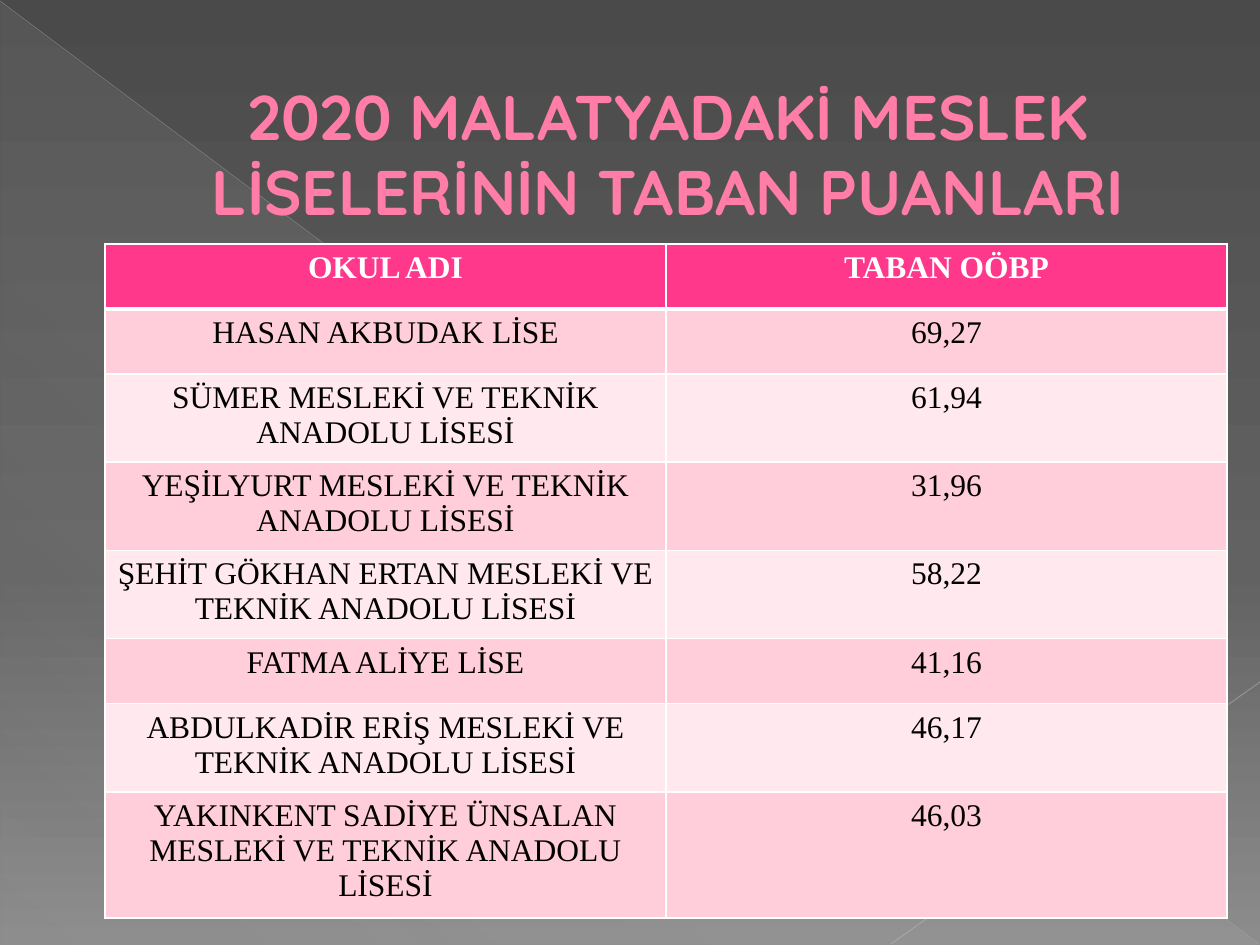
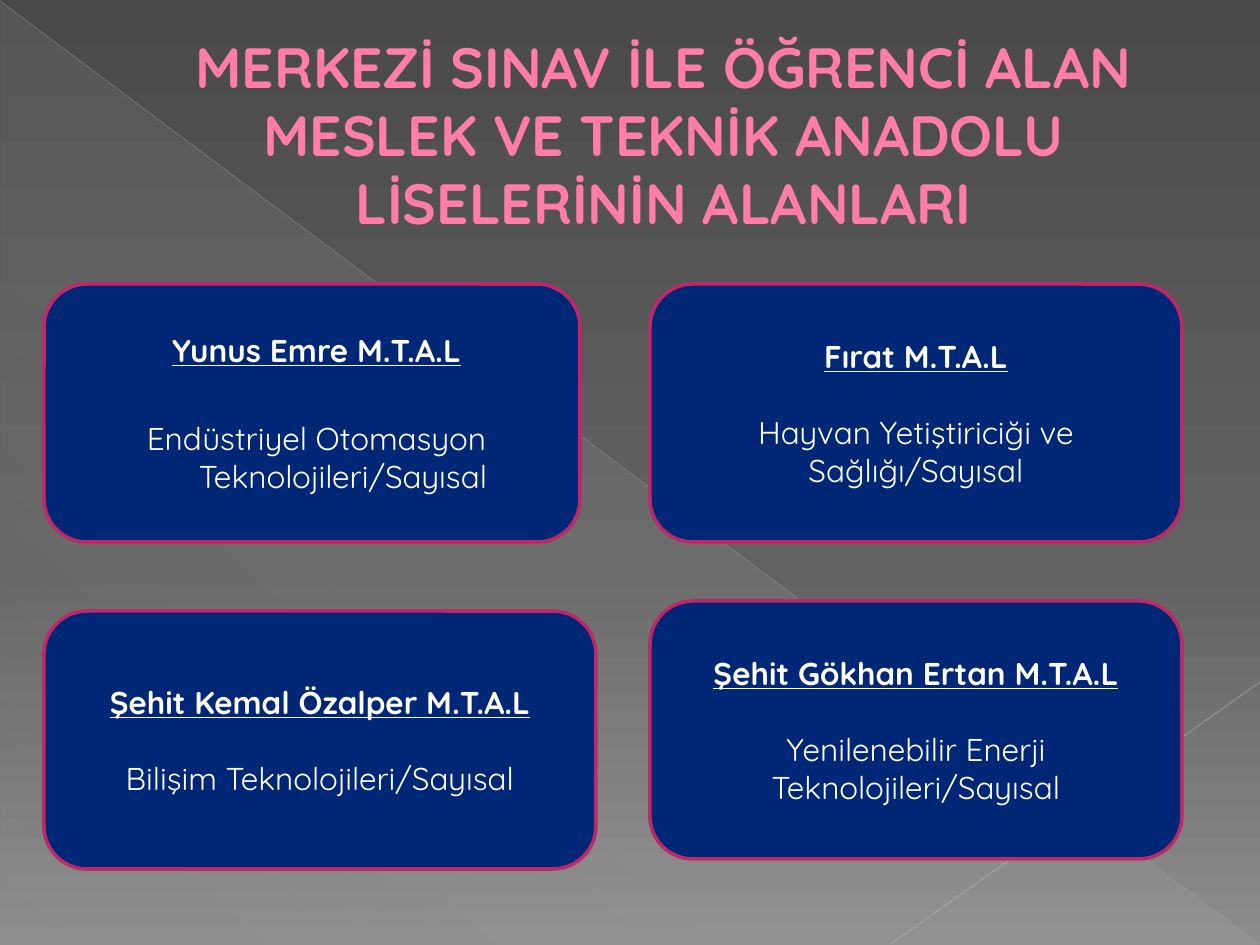
from lxml import etree
from pptx import Presentation
from pptx.dml.color import RGBColor
from pptx.enum.shapes import MSO_CONNECTOR, MSO_SHAPE
from pptx.enum.text import MSO_ANCHOR, PP_ALIGN
from pptx.oxml.ns import qn
from pptx.util import Pt

STRAIGHT = MSO_CONNECTOR.STRAIGHT
TRIANGLE, CARD = MSO_SHAPE.RIGHT_TRIANGLE, MSO_SHAPE.ROUNDED_RECTANGLE
MIDDLE, CENTER = MSO_ANCHOR.MIDDLE, PP_ALIGN.CENTER

WHITE = RGBColor(0xFF, 0xFF, 0xFF)
BLACK = RGBColor(0x00, 0x00, 0x00)
TITLE_PINK = RGBColor(0xFF, 0x7D, 0xA7)
HEADER_PINK = RGBColor(0xFF, 0x38, 0x8C)
ROW_PINKS = (RGBColor(0xFF, 0xCE, 0xDA), RGBColor(0xFF, 0xE8, 0xEE))
CARD_BLUE = RGBColor(0x00, 0x27, 0x76)
CARD_EDGE = RGBColor(0xBD, 0x29, 0x68)
DARK_GRAY = RGBColor(0x4A, 0x4A, 0x4A)
MID_GRAY = RGBColor(0x62, 0x62, 0x62)
SOFT_GRAY = RGBColor(0x8C, 0x8C, 0x8C)
HAZE_GRAY = RGBColor(0xD2, 0xD2, 0xD2)
LONG_RAY = RGBColor(0xBF, 0xBF, 0xBF)
SHORT_RAY = RGBColor(0xC6, 0xC6, 0xC6)

BACKGROUND_STOPS = [(0, DARK_GRAY, 100), (60, MID_GRAY, 100), (100, SOFT_GRAY, 100)]
HAZE_STOPS = [(0, HAZE_GRAY, 10), (70, HAZE_GRAY, 8), (100, HAZE_GRAY, 1)]
HAZE_BOX = (1, 2, 1258, 943)
RAYS = [
    ((0, 1, 1259, 944), LONG_RAY, 0.39, 35),
    ((1260, 682, 891, 944), SHORT_RAY, 0.47, 45),
]

SCORES_TITLE = ("2020 MALATYADAKİ MESLEK LİSELERİNİN TABAN PUANLARI", (44, 76, 1181, 154), 36)
SCORES_HEADER = ("OKUL ADI", "TABAN OÖBP")
SCORES = [
    ("HASAN AKBUDAK LİSE", "69,27"),
    ("SÜMER MESLEKİ VE TEKNİK ANADOLU LİSESİ", "61,94"),
    ("YEŞİLYURT MESLEKİ VE TEKNİK ANADOLU LİSESİ", "31,96"),
    ("ŞEHİT GÖKHAN ERTAN MESLEKİ VE TEKNİK ANADOLU LİSESİ", "58,22"),
    ("FATMA ALİYE LİSE", "41,16"),
    ("ABDULKADİR ERİŞ MESLEKİ VE TEKNİK ANADOLU LİSESİ", "46,17"),
    ("YAKINKENT SADİYE ÜNSALAN MESLEKİ VE TEKNİK ANADOLU LİSESİ", "46,03"),
]
SCORES_LEFT, SCORES_TOP, SCORES_COLUMN = 105, 244, 561
ROW_LINES = (1, 1, 2, 2, 2, 1, 2, 3)
ROW_HEIGHTS = {1: 65, 2: 85, 3: 121}

FIELDS_TITLE = (
    "MERKEZİ SINAV İLE ÖĞRENCİ ALAN MESLEK VE TEKNİK ANADOLU LİSELERİNİN ALANLARI",
    (63, 37, 1134, 193), 32.4)
HANGING = {"marL": 62, "indent": -53}
FIELDS = [
    ("Yunus Emre M.T.A.L", "Endüstriyel Otomasyon Teknolojileri/Sayısal",
     (44, 284, 536, 258), 29, HANGING),
    ("Fırat M.T.A.L", "Hayvan Yetiştiriciği ve Sağlığı/Sayısal",
     (650, 284, 532, 258), 22, {}),
    ("Şehit Kemal Özalper M.T.A.L", "Bilişim Teknolojileri/Sayısal",
     (44, 611, 552, 258), 22, {}),
    ("Şehit Gökhan Ertan M.T.A.L", "Yenilenebilir Enerji Teknolojileri/Sayısal",
     (650, 601, 532, 258), 22, {}),
]

FONT = {"name": "Quicksand", "size": Pt(18), "bold": False}
TITLE_FONT = {**FONT, "bold": True}
SCHOOL_FONT = {**FONT, "bold": True, "underline": True}
TABLE_FONT = {**FONT, "name": "Times New Roman"}


def px(value):
    return round(value * 914400 / 126)


def place(box):
    return [px(value) for value in box]


def add_color(parent, color, alpha=100):
    tint = etree.SubElement(parent, qn("a:srgbClr"), val=str(color))
    if alpha < 100:
        etree.SubElement(tint, qn("a:alpha"), val=str(alpha * 1000))


def set_gradient(owner, fill, stops, angle):
    fill.gradient()
    fill.gradient_angle = 360 - angle
    stop_list = next(owner.iter(qn("a:gsLst")))
    for stop in list(stop_list):
        stop_list.remove(stop)
    for position, color, alpha in stops:
        stop = etree.SubElement(stop_list, qn("a:gs"), pos=str(position * 1000))
        add_color(stop, color, alpha)


def write(paragraph, text, font, color, indents=None):
    paragraph.alignment = CENTER
    for key, value in (indents or {}).items():
        paragraph._p.get_or_add_pPr().set(key, str(px(value)))
    run = paragraph.add_run()
    run.text = text
    for key, value in font.items():
        setattr(run.font, key, value)
    run.font.color.rgb = color


def add_backdrop(slide):
    haze = slide.shapes.add_shape(TRIANGLE, *place(HAZE_BOX))
    haze.shadow.inherit = False
    haze.line.fill.background()
    set_gradient(haze._element, haze.fill, HAZE_STOPS, 133)
    for ends, color, width, alpha in RAYS:
        ray = slide.shapes.add_connector(STRAIGHT, *place(ends))
        ray.line.width = Pt(width)
        ray.line.color.rgb = color
        tint = next(ray._element.spPr.iter(qn("a:srgbClr")))
        etree.SubElement(tint, qn("a:alpha"), val=str(alpha * 1000))
        etree.SubElement(ray._element.spPr, qn("a:effectLst"))


def add_slide(prs, title, box, size):
    slide = prs.slides.add_slide(prs.slide_layouts[6])
    add_backdrop(slide)
    frame = slide.shapes.add_textbox(*place(box)).text_frame
    frame.word_wrap = True
    frame.vertical_anchor = MIDDLE
    write(frame.paragraphs[0], title, {**TITLE_FONT, "size": Pt(size)},
          TITLE_PINK, {"marL": 67, "indent": 0})
    return slide


def set_borders(cell, widths):
    properties = cell._tc.get_or_add_tcPr()
    for index, (side, width) in enumerate(widths.items()):
        border = etree.Element(qn("a:" + side), w=str(Pt(width)))
        add_color(etree.SubElement(border, qn("a:solidFill")), WHITE)
        properties.insert(index, border)


def add_scores(slide):
    heights = [px(ROW_HEIGHTS[lines]) for lines in ROW_LINES]
    rows = [SCORES_HEADER, *SCORES]
    table = slide.shapes.add_table(
        len(rows), len(SCORES_HEADER), px(SCORES_LEFT), px(SCORES_TOP),
        px(SCORES_COLUMN * len(SCORES_HEADER)), sum(heights)).table
    table.horz_banding = False
    for column in table.columns:
        column.width = px(SCORES_COLUMN)
    for r, row in enumerate(rows):
        table.rows[r].height = heights[r]
        header = r == 0
        for c, text in enumerate(row):
            cell = table.cell(r, c)
            cell.fill.solid()
            cell.fill.fore_color.rgb = HEADER_PINK if header else ROW_PINKS[(r - 1) % 2]
            set_borders(cell, {"lnL": 1, "lnR": 1, "lnT": 3 if r == 1 else 1,
                               "lnB": 3 if header else 1})
            write(cell.text_frame.paragraphs[0], text, {**TABLE_FONT, "bold": header},
                  WHITE if header else BLACK)


def add_fields(slide):
    for school, field, box, gap, indents in FIELDS:
        card = slide.shapes.add_shape(CARD, *place(box))
        card.shadow.inherit = False
        card.fill.solid()
        card.fill.fore_color.rgb = CARD_BLUE
        card.line.color.rgb = CARD_EDGE
        card.line.width = Pt(2)
        frame = card.text_frame
        frame.word_wrap = True
        frame.vertical_anchor = MIDDLE
        write(frame.paragraphs[0], school, SCHOOL_FONT, WHITE, indents)
        detail = frame.add_paragraph()
        detail.space_before = Pt(gap)
        write(detail, field, FONT, WHITE, indents)


def main():
    prs = Presentation()
    prs.slide_width, prs.slide_height = px(1260), px(945)
    master = prs.slide_master
    set_gradient(master.element, master.background.fill, BACKGROUND_STOPS, 90)
    add_scores(add_slide(prs, *SCORES_TITLE))
    add_fields(add_slide(prs, *FIELDS_TITLE))
    prs.save("out.pptx")


if __name__ == "__main__":
    main()
